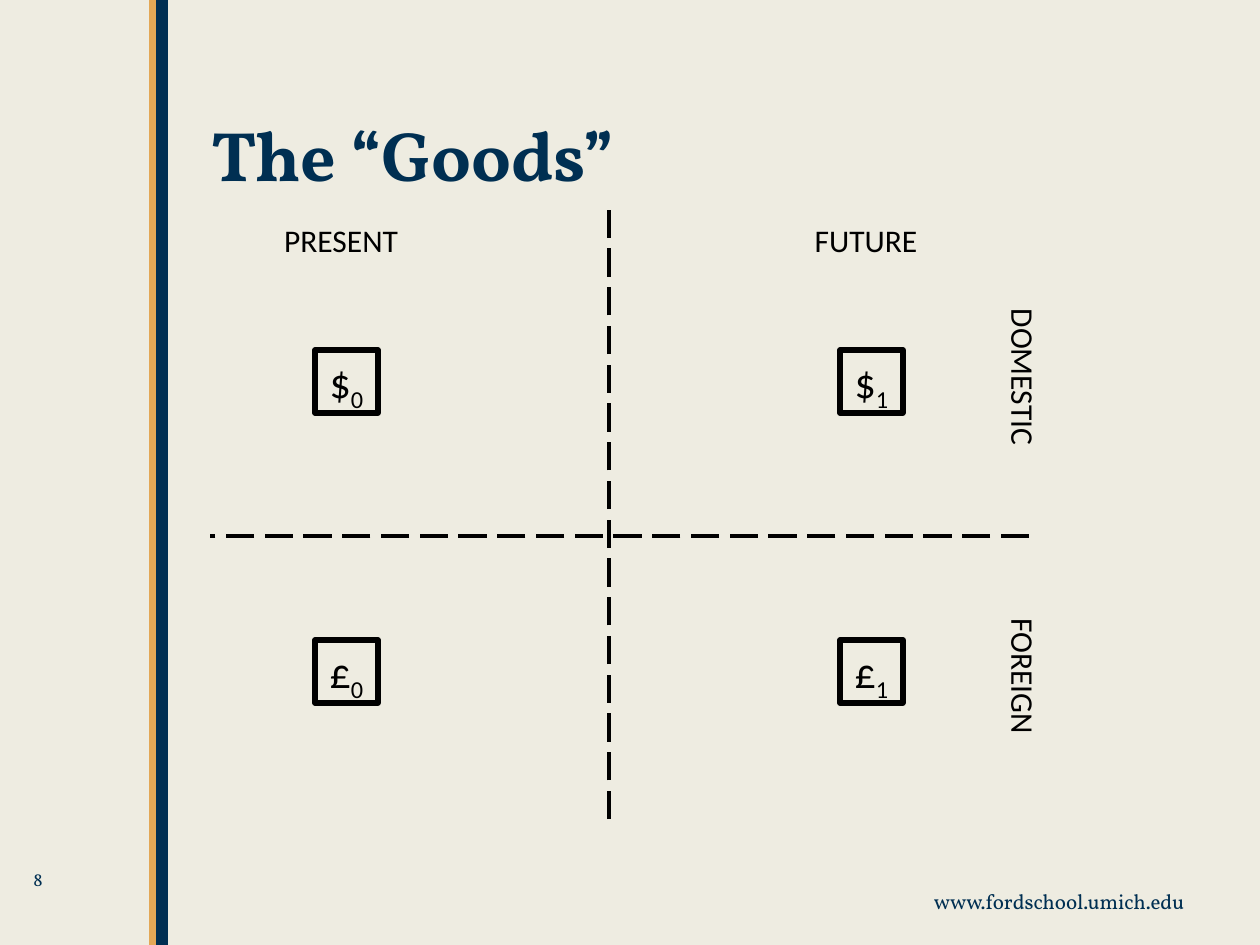
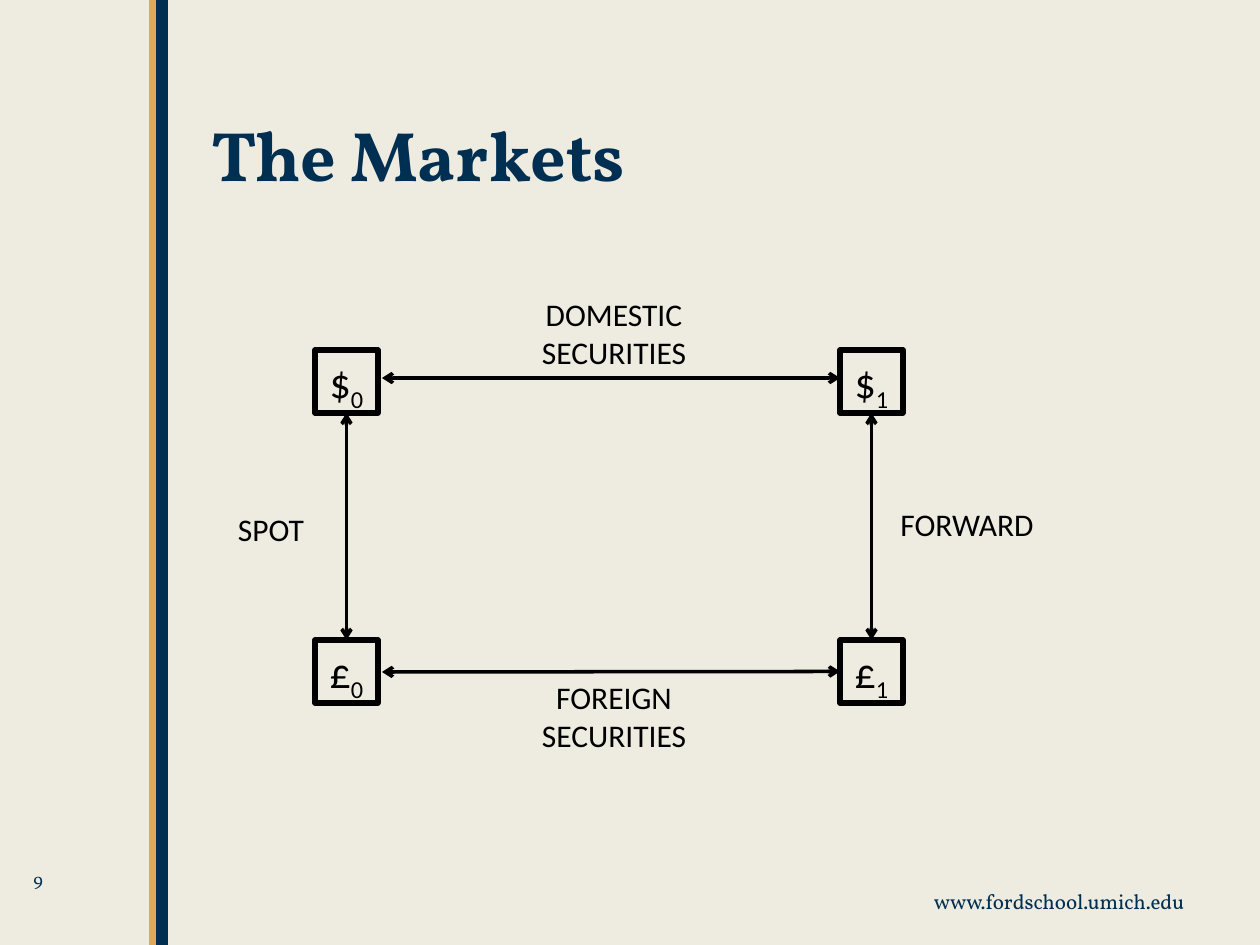
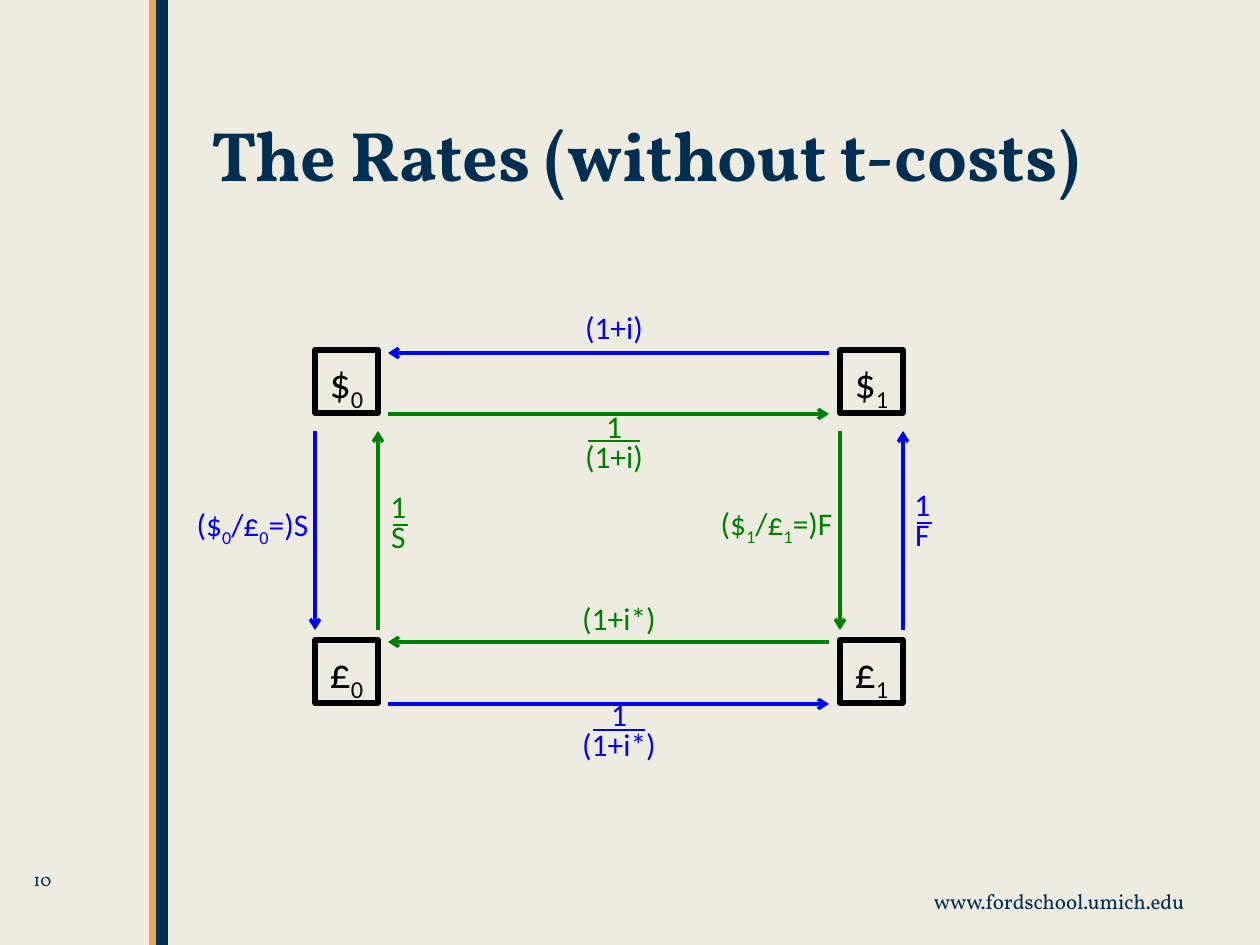
from lxml.etree import SubElement
from pptx import Presentation
from pptx.dml.color import RGBColor
from pptx.enum.dml import MSO_LINE
from pptx.enum.shapes import MSO_CONNECTOR, MSO_SHAPE
from pptx.enum.text import MSO_ANCHOR, PP_ALIGN
from pptx.oxml.ns import qn
from pptx.util import Pt

# Theme
NAVY, GOLD, CREAM = "002F52", "E3A856", "EEECE1"
BLACK, BLUE, GREEN = "000000", "0000FF", "008000"
SERIF, SANS = "Vollkorn", "Calibri"
SCALE = 914400 / 126
WIDE, HIGH = 1260, 945
BANDS = [(155, 13, NAVY), (149, 7, GOLD)]  # left, width, colour
SITE = "www.fordschool.umich.edu"

# Content: an underscore lowers the character after it
TITLES = ["The “Goods”", "The Markets", "The Rates (without t-costs)"]
FIRST = 8
SIDE, COLS, ROWS = 63, (315, 840), (350, 640)
GOODS = [["$_0", "$_1"], ["£_0", "£_1"]]
LABEL = 220  # usual label width

AXES = [(609, 819, 609, 210), (1029, 536, 210, 536)]
HEADS = [  # text, left, top, turn
    ("PRESENT", 231, 215, 0), ("FUTURE", 756, 215, 0),
    ("DOMESTIC", 914, 352, 90), ("FOREIGN", 914, 651, 90),
]
MARKETS = [  # text, left, top, height
    ("SPOT", 161, 504, 50), ("FORWARD", 857, 499, 50),
    ("DOMESTIC SECURITIES", 504, 289, 90), ("FOREIGN SECURITIES", 504, 672, 90),
]
FLOWS = [  # from x, from y, to x, to y, colour
    (829, 353, 388, 353, BLUE), (388, 414, 829, 414, GREEN),
    (829, 642, 388, 642, GREEN), (388, 704, 829, 704, BLUE),
    (315, 431, 315, 630, BLUE), (378, 630, 378, 431, GREEN),
    (840, 431, 840, 630, GREEN), (903, 630, 903, 431, BLUE),
]
RATES = [  # text, left, top, width, colour
    ("(1+i)", 504, 302, LABEL, BLUE), ("(1+i*)", 509, 593, LABEL, GREEN),
    ("($_0/£_0=)S", 179, 499, 147, BLUE), ("($_1/£_1=)F", 703, 498, 147, GREEN),
]
RATIOS = [  # denominator, left, top, width, bar from x, bar to x, bar y, colour
    ("(1+i)", 504, 401, LABEL, 640, 588, 441, GREEN),
    ("(1+i*)", 509, 689, LABEL, 645, 593, 730, BLUE),
    ("S", 362, 481, 73, 408, 393, 525, GREEN),
    ("F", 886, 479, 73, 932, 917, 523, BLUE),
]


def px(*nums):
    return [round(n * SCALE) for n in nums]


def rgb(code):
    return RGBColor.from_string(code)


def write(shape, text, size=18, font=SANS, color=BLACK, bold=False,
          align=PP_ALIGN.CENTER, anchor=MSO_ANCHOR.TOP):
    frame = shape.text_frame
    frame.word_wrap, frame.vertical_anchor = True, anchor
    para = frame.paragraphs[0]
    para.alignment = align

    def put(part, low=False):
        if part:
            run = para.add_run()
            run.text = part
            run.font.size, run.font.name, run.font.bold = Pt(size), font, bold
            run.font.color.rgb = rgb(color)
            if low:
                run.font._element.set("baseline", "-25000")

    start, *rest = text.split("_")
    put(start)
    for part in rest:
        put(part[0], True)
        put(part[1:])


def label(slide, text, x, y, w=LABEL, h=50, turn=0, **style):
    box = slide.shapes.add_textbox(*px(x, y, w, h))
    box.rotation = turn
    write(box, text, **style)
    return box


def rect(slide, x, y, w, h, fill=None, line=None):
    shape = slide.shapes.add_shape(MSO_SHAPE.RECTANGLE, *px(x, y, w, h))
    shape.shadow.inherit = False
    if fill:
        shape.fill.solid()
        shape.fill.fore_color.rgb = rgb(fill)
    else:
        shape.fill.background()
    if line:
        shape.line.color.rgb, shape.line.width = rgb(line), Pt(3)
    else:
        shape.line.fill.background()
    return shape


def link(slide, x1, y1, x2, y2, color=BLACK, width=2, dash=None, ends=()):
    line = slide.shapes.add_connector(MSO_CONNECTOR.STRAIGHT, *px(x1, y1, x2, y2))
    line.line.color.rgb, line.line.width = rgb(color), Pt(width)
    if dash:
        line.line.dash_style = dash
    props = line._element.spPr
    for end in ends:
        SubElement(props.find(qn("a:ln")), qn(f"a:{end}End"), type="arrow")
    SubElement(props, qn("a:effectLst"))
    return line


def dress(slide, layout):
    """Draw the bands and the web address, then move them to the layout."""
    parts = [rect(slide, x, 0, w, HIGH, fill=color) for x, w, color in BANDS]
    parts.append(label(slide, SITE, 882, 882, 315, 38, size=12, font=SERIF,
                       color=NAVY, align=PP_ALIGN.RIGHT))
    for part in parts:
        layout.shapes._spTree.append(part._element)


def start(deck, layout, title, page):
    """Add a slide with its title, number and four goods."""
    slide = deck.slides.add_slide(layout)
    head = slide.shapes.title
    head.left, head.top, head.width, head.height = px(199, 105, 998, 155)
    write(head, title, size=40, font=SERIF, color=NAVY, bold=True,
          align=PP_ALIGN.LEFT)
    label(slide, str(page), 21, 858, 116, 43, size=10.5, font=SERIF, color=NAVY,
          align=PP_ALIGN.LEFT, anchor=MSO_ANCHOR.MIDDLE)
    grid = []
    for y, names in zip(ROWS, GOODS):
        grid.append([rect(slide, x, y, SIDE, SIDE, line=BLACK) for x in COLS])
        for box, name in zip(grid[-1], names):
            write(box, name, size=24)
    return slide, grid


def goods(slide):
    for axis in AXES:
        link(slide, *axis, dash=MSO_LINE.LONG_DASH)
    for text, x, y, turn in HEADS:
        label(slide, text, x, y, turn=turn)


def markets(slide, grid):
    both = ("head", "tail")
    for top, low in zip(*grid):
        line = link(slide, 0, 0, 0, 0, ends=both)
        line.begin_connect(low, 0)
        line.end_connect(top, 2)
    link(slide, 840, 378, 382, 378, ends=both)
    line = link(slide, 840, 672, 382, 672, ends=both)
    line.begin_connect(grid[1][1], 1)
    for text, x, y, h in MARKETS:
        label(slide, text, x, y, h=h)


def rates(slide):
    for *ends, color in FLOWS:
        link(slide, *ends, color=color, ends=["tail"])
    for text, x, y, w, color in RATES:
        label(slide, text, x, y, w, color=color)
    for text, x, y, w, x1, x2, bar, color in RATIOS:
        label(slide, "1", x, y, w, color=color)
        label(slide, text, x, y + 30, w, color=color)
        link(slide, x1, bar, x2, bar, color=color, width=1.5)


def main():
    deck = Presentation()
    deck.slide_width, deck.slide_height = px(WIDE, HIGH)
    back = deck.slide_master.background.fill
    back.solid()
    back.fore_color.rgb = rgb(CREAM)
    layout = deck.slide_layouts[5]
    made = [start(deck, layout, title, page)
            for page, title in enumerate(TITLES, FIRST)]
    dress(made[0][0], layout)
    goods(made[0][0])
    markets(*made[1])
    rates(made[2][0])
    deck.save("out.pptx")


if __name__ == "__main__":
    main()
